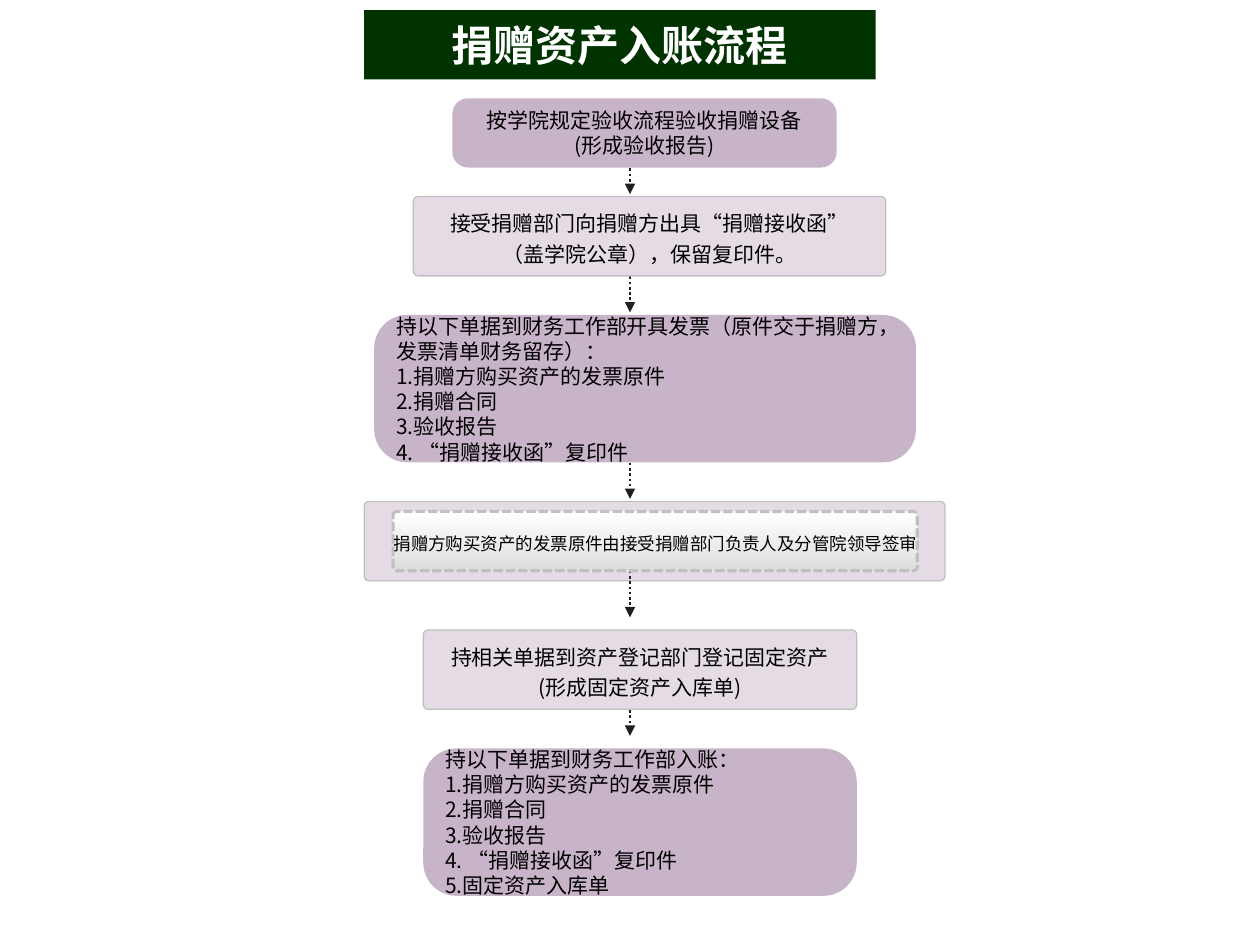
from dataclasses import dataclass
from typing import Optional

from lxml.etree import SubElement
from pptx import Presentation
from pptx.dml.color import RGBColor
from pptx.enum.dml import MSO_LINE
from pptx.enum.shapes import MSO_CONNECTOR, MSO_SHAPE
from pptx.enum.text import MSO_ANCHOR, MSO_AUTO_SIZE, PP_ALIGN
from pptx.oxml.ns import qn
from pptx.util import Inches, Pt


@dataclass(frozen=True)
class Theme:
    font: str = "Noto Sans CJK SC"
    banner: RGBColor = RGBColor(0x00, 0x33, 0x00)
    mauve: RGBColor = RGBColor(0xC8, 0xB4, 0xC8)
    pale: RGBColor = RGBColor(0xE5, 0xDB, 0xE5)
    border: RGBColor = RGBColor(0xC0, 0xC0, 0xC0)
    arrow: RGBColor = RGBColor(0x20, 0x20, 0x20)
    grey: RGBColor = RGBColor(0xDD, 0xDD, 0xDD)
    white: RGBColor = RGBColor(0xFF, 0xFF, 0xFF)
    black: RGBColor = RGBColor(0x00, 0x00, 0x00)
    title_size: float = 24
    step_size: float = 12
    note_size: float = 10


THEME = Theme()


@dataclass(frozen=True)
class BoxStyle:
    fill: Optional[RGBColor]  # None gives the white-to-grey gradient
    corner: float
    border_width: float = 0
    dash: Optional[MSO_LINE] = None
    align: PP_ALIGN = PP_ALIGN.CENTER
    spacing: float = 1.0
    size: float = THEME.step_size


@dataclass(frozen=True)
class Step:
    left: float
    top: float
    width: float
    height: float
    style: BoxStyle
    lines: tuple[str, ...] = ()


ROUNDED = BoxStyle(THEME.mauve, 0.225)
CHECKLIST = BoxStyle(THEME.mauve, 0.225, align=PP_ALIGN.LEFT)
PANEL = BoxStyle(THEME.pale, 0.06, 0.75, spacing=1.2)
NOTE = BoxStyle(None, 0.06, 1.75, MSO_LINE.SQUARE_DOT, spacing=1.2, size=THEME.note_size)

DOCUMENTS = ("1.捐赠方购买资产的发票原件", "2.捐赠合同", "3.验收报告", "4. “捐赠接收函”复印件")

APPROVAL_PANEL = Step(2.89, 3.98, 4.61, 0.63, PANEL)
STEPS = (
    Step(3.59, 0.78, 3.05, 0.55, ROUNDED,
         ("按学院规定验收流程验收捐赠设备", "(形成验收报告)")),
    Step(3.28, 1.56, 3.75, 0.63, PANEL,
         ("接受捐赠部门向捐赠方出具“捐赠接收函”", "（盖学院公章），保留复印件。")),
    Step(2.97, 2.5, 4.3, 1.17, CHECKLIST,
         ("持以下单据到财务工作部开具发票（原件交于捐赠方，", "发票清单财务留存）：", *DOCUMENTS)),
    Step(3.12, 4.06, 4.16, 0.47, NOTE,
         ("捐赠方购买资产的发票原件由接受捐赠部门负责人及分管院领导签审",)),
    Step(3.36, 5, 3.44, 0.63, PANEL,
         ("持相关单据到资产登记部门登记固定资产", "(形成固定资产入库单)")),
    Step(3.36, 5.94, 3.44, 1.17, CHECKLIST,
         ("持以下单据到财务工作部入账：", *DOCUMENTS, "5.固定资产入库单")),
)
ARROW_X, ARROW_LENGTH = 5, 0.37
ARROW_TOPS = (1.17, 2.11, 3.59, 4.53, 5.47)


def write_lines(frame, lines: tuple[str, ...], size: float, color: RGBColor,
                align: PP_ALIGN, spacing: float = 1.0, bold: bool = False) -> None:
    frame.word_wrap = False
    frame.auto_size = MSO_AUTO_SIZE.NONE
    frame.vertical_anchor = MSO_ANCHOR.MIDDLE
    for index, line in enumerate(lines):
        paragraph = frame.add_paragraph() if index else frame.paragraphs[0]
        paragraph.alignment = align
        paragraph.line_spacing = spacing
        run = paragraph.add_run()
        run.text = line
        run.font.size = Pt(size)
        run.font.bold = bold
        run.font.color.rgb = color
        run.font.name = THEME.font
        SubElement(run.font._element, qn("a:ea"), typeface=THEME.font)


def draw_title(slide, text: str) -> None:
    title = slide.shapes.title
    title.left, title.top = Inches(2.89), Inches(0.08)
    title.width, title.height = Inches(4.06), Inches(0.55)
    # Give the placeholder rounded corners
    outline = SubElement(title._element.spPr, qn("a:prstGeom"), prst="roundRect")
    guides = SubElement(outline, qn("a:avLst"))
    SubElement(guides, qn("a:gd"), name="adj", fmla="val 22500")
    title.fill.solid()
    title.fill.fore_color.rgb = THEME.banner
    write_lines(title.text_frame, (text,), THEME.title_size, THEME.white,
                PP_ALIGN.CENTER, bold=True)


def draw_step(slide, step: Step) -> None:
    style = step.style
    box = slide.shapes.add_shape(
        MSO_SHAPE.ROUNDED_RECTANGLE, Inches(step.left), Inches(step.top),
        Inches(step.width), Inches(step.height))
    box.shadow.inherit = False
    box.adjustments[0] = style.corner
    if style.fill is None:
        box.fill.gradient()
        box.fill.gradient_angle = 270
        for stop, color in zip(box.fill.gradient_stops, (THEME.white, THEME.grey)):
            stop.color.rgb = color
    else:
        box.fill.solid()
        box.fill.fore_color.rgb = style.fill
    if style.border_width:
        box.line.color.rgb = THEME.border
        box.line.width = Pt(style.border_width)
        if style.dash is not None:
            box.line.dash_style = style.dash
    else:
        box.line.fill.background()
    write_lines(box.text_frame, step.lines, style.size, THEME.black,
                style.align, style.spacing)


def draw_arrow(slide, top: float) -> None:
    arrow = slide.shapes.add_connector(
        MSO_CONNECTOR.STRAIGHT, Inches(ARROW_X), Inches(top),
        Inches(ARROW_X), Inches(top + ARROW_LENGTH))
    arrow.line.color.rgb = THEME.arrow
    arrow.line.width = Pt(1.5)
    arrow.line.dash_style = MSO_LINE.ROUND_DOT
    properties = arrow._element.spPr
    SubElement(properties.find(qn("a:ln")), qn("a:tailEnd"), type="triangle")
    SubElement(properties, qn("a:effectLst"))


def main() -> None:
    deck = Presentation()
    deck.slide_width, deck.slide_height = Inches(10), Inches(7.5)
    slide = deck.slides.add_slide(deck.slide_layouts[5])
    draw_title(slide, "捐赠资产入账流程")

    # The approval panel lies under the arrows, the other boxes over them
    draw_step(slide, APPROVAL_PANEL)
    for top in ARROW_TOPS:
        draw_arrow(slide, top)
    for step in STEPS:
        draw_step(slide, step)
    deck.save("out.pptx")


if __name__ == "__main__":
    main()
